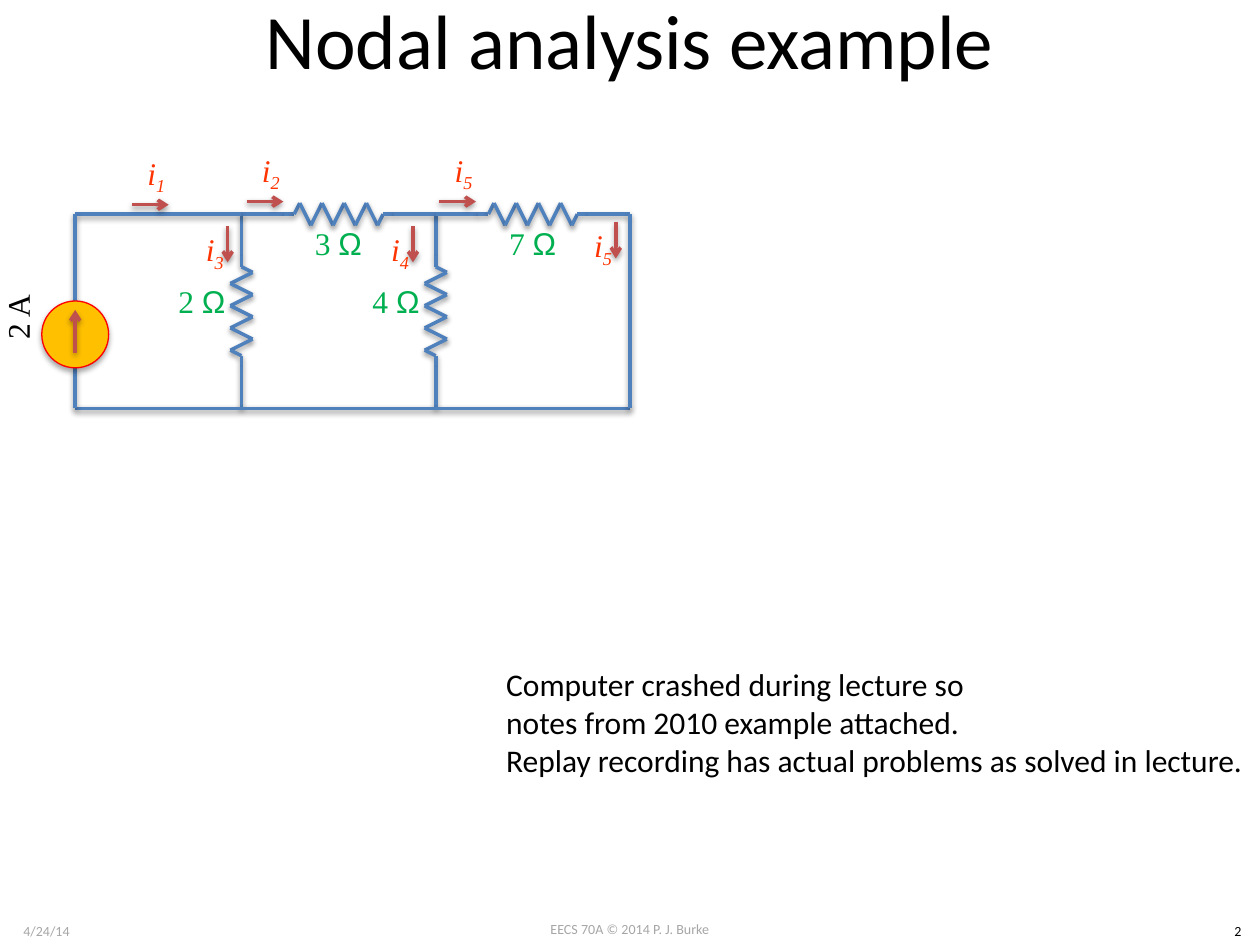
from itertools import pairwise

from lxml.etree import SubElement
from pptx import Presentation
from pptx.dml.color import RGBColor
from pptx.enum.shapes import MSO_CONNECTOR, MSO_SHAPE
from pptx.enum.text import MSO_ANCHOR, PP_ALIGN
from pptx.oxml.ns import qn
from pptx.util import Pt

COLOURS = {
    "text": "000000",
    "footer": "A6A6A6",
    "wire": "4F81BD",
    "arrow": "C0504D",
    "value": "00B050",
    "current": "FF3300",
    "source_fill": "FFC000",
    "source_line": "FF0000",
}
BODY = {"name": "Calibri", "size": Pt(18)}
TITLE = {"name": "Calibri", "size": Pt(44)}
FOOTER = {"name": "Calibri", "size": Pt(8)}
MATH = {"name": "Times New Roman", "size": Pt(18)}
OHM = {"name": "Arial", "size": Pt(18)}
CURRENT = {**MATH, "italic": True}


def colour(key):
    """Return the named colour."""
    return RGBColor.from_string(COLOURS[key])


def add_text(slide, box, paragraphs, ink, align=PP_ALIGN.CENTER,
             anchor=MSO_ANCHOR.MIDDLE, wrap=True):
    """Add a text box whose paragraphs are lists of (text, font values) runs."""
    shape = slide.shapes.add_textbox(*map(Pt, box))
    frame = shape.text_frame
    frame.word_wrap = wrap
    frame.vertical_anchor = anchor
    for index, runs in enumerate(paragraphs):
        paragraph = frame.add_paragraph() if index else frame.paragraphs[0]
        paragraph.alignment = align
        for text, values in runs:
            run = paragraph.add_run()
            run.text = text
            run.font.color.rgb = colour(ink)
            for name, value in values.items():
                setattr(run.font, name, value)
    return shape


def add_line(slide, start, end, ink="wire"):
    """Add a straight line that keeps the theme's soft shadow."""
    line = slide.shapes.add_connector(MSO_CONNECTOR.STRAIGHT, *map(Pt, (*start, *end)))
    line.line.color.rgb = colour(ink)
    line.line.width = Pt(2)
    return line


def add_arrow(slide, start, end):
    """Add a line with an open arrowhead at its end."""
    arrow = add_line(slide, start, end, "arrow")
    SubElement(arrow.line._get_or_add_ln(), qn("a:tailEnd"), type="arrow")


def add_resistor(slide, left, top, length, vertical=False):
    """Draw leads and an eight-peak zigzag along one axis."""
    lead, joint, pitch, peaks = 24, 6.3, 6.35, 8
    zigzag = (length - peaks * pitch) / 2
    side = 1 if vertical else -1
    nodes = [(0, 0), (lead, 0), (zigzag, 0)]
    nodes += [(zigzag + pitch * (index + 0.5), side * pitch * (-1) ** index)
              for index in range(peaks)]
    nodes += [(length - zigzag, 0), (length - zigzag + joint, 0), (length, 0)]
    points = [(left + across, top + along) if vertical else (left + along, top + across)
              for along, across in nodes]
    for start, end in pairwise(points):
        add_line(slide, start, end)


def add_resistance(slide, left, top, number):
    """Label a resistor with its value in ohms."""
    runs = [(f"{number} ", MATH), ("Ω", OHM)]
    add_text(slide, (left, top, 85.7, 52.6), [runs], "value")


def add_current(slide, left, top, index, vertical=False):
    """Draw a branch current arrow and its subscripted name."""
    length = 21
    end = (left, top + length) if vertical else (left + length, top)
    add_arrow(slide, (left, top), end)
    shift, rise = (-35, -7) if vertical else (-13.8, -38.9)
    box = (left + shift, top + rise, 55.4, 43.9)
    shape = add_text(slide, box, [[("i", CURRENT), (index, CURRENT)]], "current")
    subscript = shape.text_frame.paragraphs[0].runs[1]
    subscript.font._element.set("baseline", "-25000")


def add_source(slide, left, top, height):
    """Draw the current source with its wires and rotated value."""
    radius = 19.1
    middle = top + 68.7
    add_line(slide, (left, middle - radius), (left, top))
    add_line(slide, (left, middle + radius), (left, top + height))
    circle = slide.shapes.add_shape(
        MSO_SHAPE.OVAL, Pt(left - radius), Pt(middle - radius),
        Pt(2 * radius), Pt(2 * radius))
    circle.fill.solid()
    circle.fill.fore_color.rgb = colour("source_fill")
    circle.line.color.rgb = colour("source_line")
    circle.line.width = Pt(0.75)
    add_arrow(slide, (left, middle + 10.5), (left, middle - 14))
    label = add_text(slide, (left - 76, top + 32.4, 85.7, 52.6), [[("2 A", MATH)]], "text")
    label.rotation = 270


def add_circuit(slide, left, top, width, height):
    """Draw the two-node circuit inside its box."""
    span = 111
    right, bottom = left + width, top + height
    second = right - span
    first = second - span
    for node, number in ((first, 2), (second, 4)):
        add_resistor(slide, node, top, height, vertical=True)
        add_resistance(slide, node - 65.5, top + 23, number)
    for node, number in ((first, 3), (second, 7)):
        add_resistor(slide, node, top, span)
        add_resistance(slide, node + 12.5, top - 10, number)
    add_line(slide, (left, top), (first, top))
    add_line(slide, (left, bottom), (right, bottom))
    add_line(slide, (right, top), (right, bottom))
    add_source(slide, left, top, height)
    for x, y, index in ((32.4, -5.4, "1"), (97.9, -7.2, "2"), (208, -7.2, "5")):
        add_current(slide, left + x, top + y, index)
    for x, y, index in ((87.1, 6.5, "3"), (193, 6.5, "4"), (308.9, 4.3, "5")):
        add_current(slide, left + x, top + y, index, vertical=True)


def add_footer(slide, left, top, width, height):
    """Place the date, the course line and the slide number in the footer strip."""
    parts = (
        (0, 0.7, 53.3, "4/24/14", "footer"),
        (276, 0, 168, "EECS 70A © 2014 P. J. Burke", "footer"),
        (width - 25.2, 0.7, 25.2, "2", "text"),
    )
    for x, y, part_width, text, ink in parts:
        box = (left + x, top + y, part_width, height)
        add_text(slide, box, [[(text, FOOTER)]], ink, anchor=MSO_ANCHOR.TOP)


def main():
    """Build the slide and save it."""
    presentation = Presentation()
    presentation.slide_width, presentation.slide_height = Pt(720), Pt(540)
    slide = presentation.slides.add_slide(presentation.slide_layouts[6])
    add_footer(slide, 0, 522.7, 720, 17)
    add_text(slide, (36, -12, 648, 68), [[("Nodal analysis example", TITLE)]], "text")
    add_circuit(slide, 43, 122.4, 317, 111)
    notice = (
        "Computer crashed during lecture so",
        "notes from 2010 example attached.",
        "Replay recording has actual problems as solved in lecture.",
    )
    add_text(slide, (282.2, 376.6, 441.4, 72.7), [[(text, BODY)] for text in notice],
             "text", PP_ALIGN.LEFT, MSO_ANCHOR.TOP, wrap=False)
    presentation.save("out.pptx")


if __name__ == "__main__":
    main()
